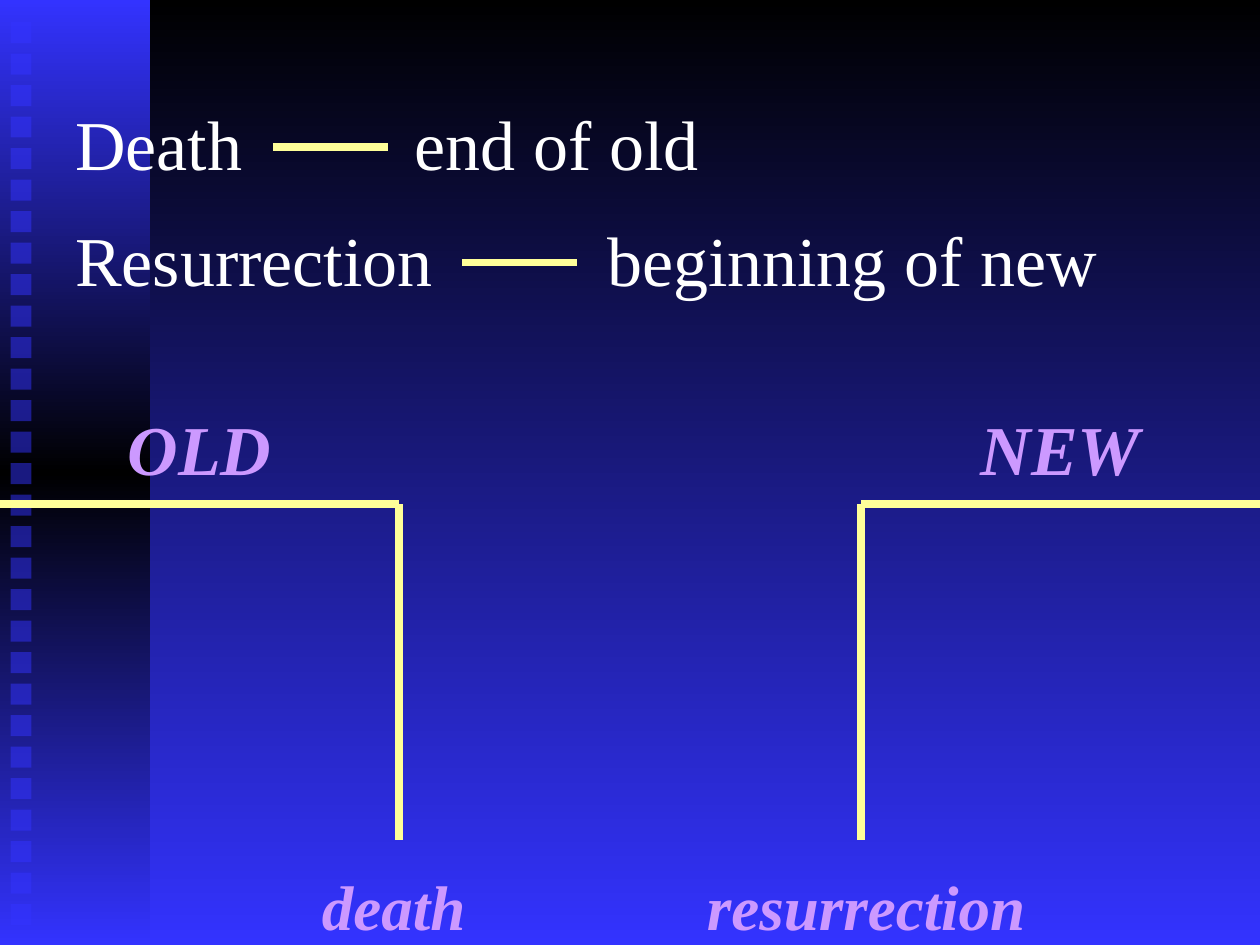
from copy import deepcopy
from lxml.etree import SubElement
from pptx import Presentation
from pptx.dml.color import RGBColor
from pptx.enum.shapes import MSO_CONNECTOR, MSO_SHAPE
from pptx.enum.text import MSO_ANCHOR, PP_ALIGN
from pptx.oxml.ns import qn
from pptx.util import Pt


def hue(code):
    return RGBColor.from_string(code)


def shade(fill, codes):
    fill.gradient_angle = 270
    for stop, code in zip(fill.gradient_stops, codes):
        stop.color.rgb = hue(code)


deck = Presentation()
deck.slide_width, deck.slide_height = Pt(720), Pt(540)
slide = deck.slides.add_slide(deck.slide_layouts[6])
shapes = slide.shapes
BLUE, BLACK, WHITE = "3333FF", "000000", "FFFFFF"
CREAM, LILAC = "FFFF99", "CC99FF"

back = slide.background.fill
back.gradient()
shade(back, [BLACK, BLUE])

band = shapes.add_shape(MSO_SHAPE.RECTANGLE, 0, 0, Pt(85.7), Pt(540))
band.shadow.inherit = False
band.line.fill.background()
band.fill.gradient()
first, last = band.element.xpath(".//a:gs")
first.set("pos", "0")
last.set("pos", "100000")
mid = deepcopy(first)
mid.set("pos", "50000")
first.addnext(mid)
shade(band.fill, [BLUE, BLACK, BLUE])

for row in range(29):
    dot = shapes.add_shape(MSO_SHAPE.RECTANGLE, Pt(6), Pt(12.6 + 18 * row), Pt(12), Pt(12))
    dot.shadow.inherit = False
    dot.line.fill.background()
    dot.fill.solid()
    dot.fill.fore_color.rgb = hue(BLUE)
    tint = dot.element.spPr.find(".//" + qn("a:srgbClr"))
    SubElement(tint, qn("a:alpha"), val="50000")

lines = [
    (156, 84, 222, 84),
    (264, 150, 330, 150),
    (0, 288, 228, 288),
    (228, 288, 228, 480),
    (492, 480, 492, 288),
    (492, 288, 720, 288),
]
for ends in lines:
    line = shapes.add_connector(MSO_CONNECTOR.STRAIGHT, *[Pt(end) for end in ends])
    line.line.color.rgb = hue(CREAM)
    line.line.width = Pt(4.5)
    SubElement(line.element.spPr, qn("a:effectLst"))

texts = [
    ("Death\tend of old", 36, 54, 390, 55.4, 40, 194),
    ("Resurrection\tbeginning of new", 36, 120, 684, 55.4, 40, 304),
    ("OLD", 0, 228, 228, 55.4, 40, None),
    ("NEW", 492, 228, 228, 55.4, 40, None),
    ("death", 150, 492, 150, 50.4, 36, None),
    ("resurrection", 384, 492, 222, 50.4, 36, None),
]
for words, left, top, width, height, size, tab in texts:
    box = shapes.add_textbox(Pt(left), Pt(top), Pt(width), Pt(height))
    frame = box.text_frame
    frame.word_wrap = True
    frame.vertical_anchor = MSO_ANCHOR.TOP
    frame.text = words
    para = frame.paragraphs[0]
    para.space_before = Pt(4.5)
    if tab:
        para.alignment = PP_ALIGN.LEFT
        tabs = SubElement(para.runs[0].font._element.getparent().getparent().pPr, qn("a:tabLst"))
        SubElement(tabs, qn("a:tab"), pos=str(Pt(tab)), algn="l")
    else:
        para.alignment = PP_ALIGN.CENTER
    for run in para.runs:
        run.font.name = "Times New Roman"
        run.font.size = Pt(size)
        run.font.bold = run.font.italic = not tab
        run.font.color.rgb = hue(WHITE if tab else LILAC)

deck.save("out.pptx")
